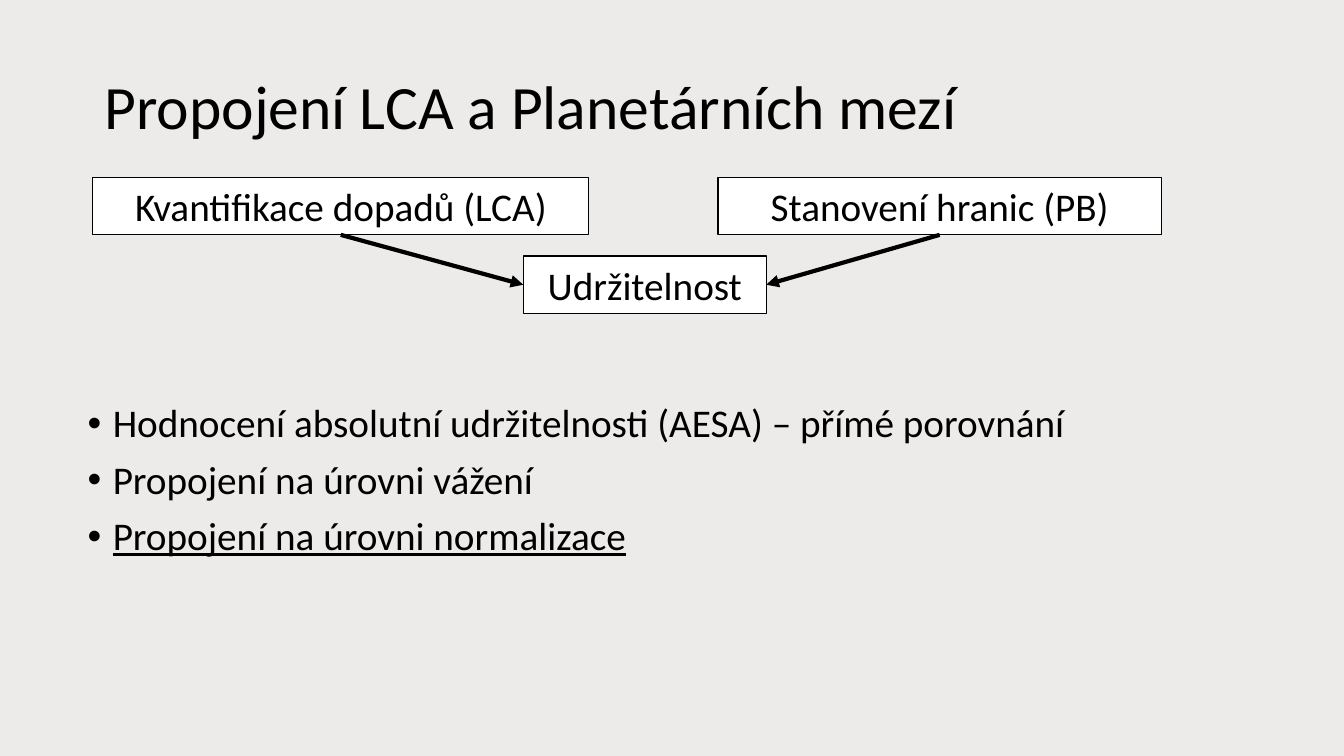
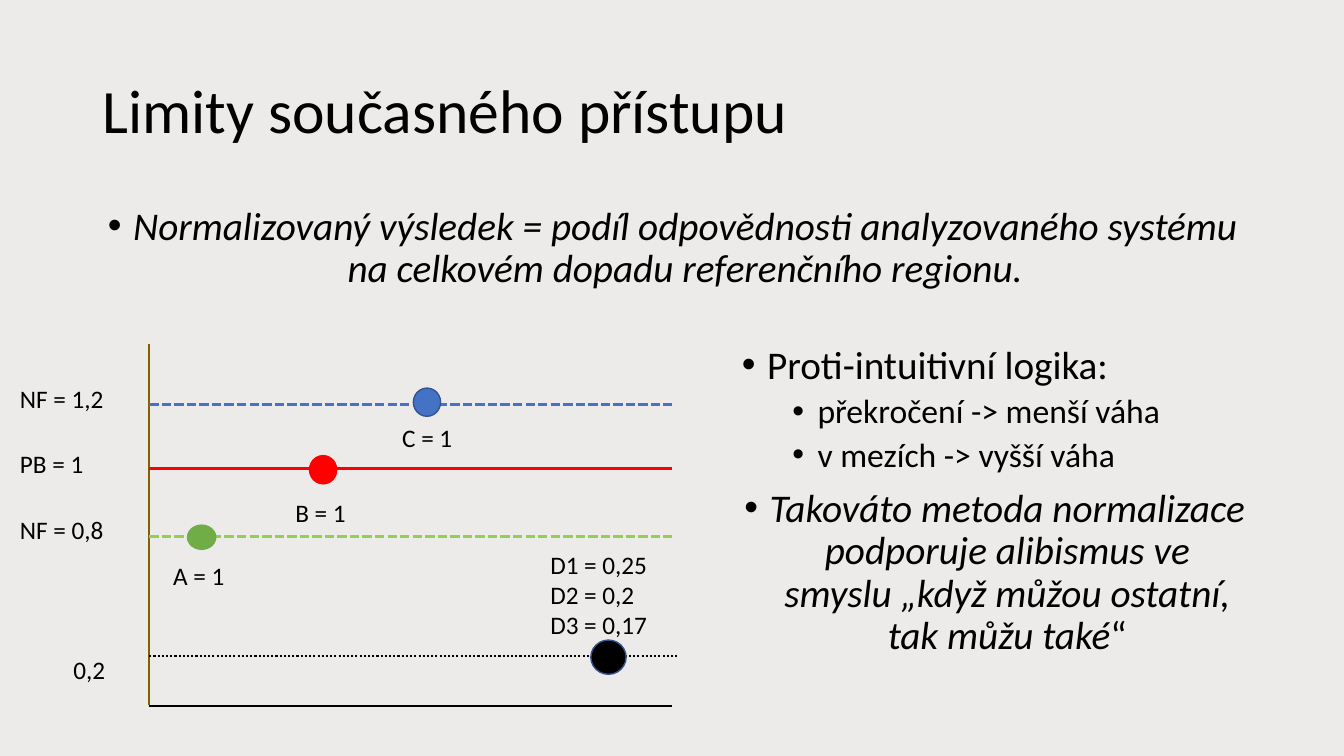
import dataclasses
import typing

import lxml.etree
import pptx
import pptx.dml.color
import pptx.enum.dml
import pptx.enum.shapes
import pptx.enum.text
import pptx.oxml.ns
import pptx.shapes.autoshape
import pptx.shapes.connector
import pptx.slide
import pptx.util

PX = 9144
SLIDE_WIDTH, SLIDE_HEIGHT = 1333, 750
AXIS_LEFT, AXIS_RIGHT, AXIS_TOP, AXIS_BOTTOM = 148, 667, 341, 700
LABEL_HEIGHT = 40
BULLET_INDENT = 25

Align = pptx.enum.text.PP_ALIGN
Dash = pptx.enum.dml.MSO_LINE
Preset = pptx.enum.shapes.MSO_SHAPE


@dataclasses.dataclass(frozen=True)
class Theme:
    font: str = "Calibri"
    bullet_font: str = "Arial"
    background: str = "ECEBE9"
    ink: str = "000000"
    paper: str = "FFFFFF"
    red: str = "FF0000"
    blue: str = "4472C4"
    dark_blue: str = "325491"
    green: str = "70AD47"
    lime: str = "92D050"
    olive: str = "806000"
    title_size: int = 44
    body_size: int = 28
    detail_size: int = 24
    label_size: int = 18


THEME = Theme()


class Box(typing.NamedTuple):
    left: int
    top: int
    width: int
    height: int


@dataclasses.dataclass(frozen=True)
class Line:
    text: str
    size: int = THEME.body_size
    align: typing.Optional[Align] = None
    italic: bool = False
    underline: bool = False
    level: typing.Optional[int] = None
    spacing: float = 1.0
    upright_ending: str = ""


@dataclasses.dataclass(frozen=True)
class Threshold:
    y: int
    color: str
    dash: typing.Optional[Dash]
    label: str
    label_box: Box
    right: int = AXIS_RIGHT
    weight: float = 2.25


@dataclasses.dataclass(frozen=True)
class Marker:
    box: Box
    fill: str
    outline: str
    labels: typing.Tuple[str, ...]
    label_box: Box


def level_label(row: int) -> Box:
    return Box(10, 375 + 65 * row, 123, LABEL_HEIGHT)


THRESHOLDS = (
    Threshold(401, THEME.blue, Dash.SQUARE_DOT, "NF = 1,2", level_label(0)),
    Threshold(465, THEME.red, None, "PB = 1", level_label(1)),
    Threshold(532, THEME.lime, Dash.SQUARE_DOT, "NF = 0,8", level_label(2)),
    Threshold(651, THEME.ink, Dash.ROUND_DOT, "0,2",
              Box(63, 644, 70, LABEL_HEIGHT), 673, 1.5),
)

MARKERS = (
    Marker(Box(186, 521, 28, 24), THEME.green, THEME.green,
           ("A = 1",), Box(162, 551, 104, LABEL_HEIGHT)),
    Marker(Box(307, 452, 27, 28), THEME.red, THEME.red,
           ("B = 1",), Box(283, 488, 82, LABEL_HEIGHT)),
    Marker(Box(410, 385, 27, 28), THEME.blue, THEME.dark_blue,
           ("C = 1",), Box(389, 414, 119, LABEL_HEIGHT)),
    Marker(Box(586, 635, 35, 34), THEME.ink, THEME.dark_blue,
           ("D1 = 0,25", "D2 = 0,2", "D3 = 0,17"), Box(536, 540, 130, 101)),
)


def rgb(color: str) -> pptx.dml.color.RGBColor:
    return pptx.dml.color.RGBColor.from_string(color)


def emu(*lengths: int) -> typing.List[pptx.util.Emu]:
    return [pptx.util.Emu(length * PX) for length in lengths]


def bullet(text: str, level: int = 0, **options: typing.Any) -> Line:
    size = THEME.detail_size if level else THEME.body_size
    return Line(text, size, level=level, spacing=0.9, **options)


def add_bullet(paragraph: typing.Any, level: int) -> None:
    paragraph.level = level
    paragraph.space_before = pptx.util.Pt(5 if level else 10)
    properties = paragraph._p.get_or_add_pPr()
    margin = BULLET_INDENT + 50 * level
    properties.set("marL", str(margin * PX))
    properties.set("indent", str(-BULLET_INDENT * PX))
    for tag, key, value in (("a:buFont", "typeface", THEME.bullet_font),
                            ("a:buChar", "char", "•")):
        mark = lxml.etree.SubElement(properties, pptx.oxml.ns.qn(tag))
        mark.set(key, value)


def write(frame: typing.Any, lines: typing.Sequence[Line]) -> None:
    frame.word_wrap = True
    frame.text = "\n".join(line.text for line in lines)
    for paragraph, line in zip(frame.paragraphs, lines):
        paragraph.alignment = line.align
        paragraph.line_spacing = line.spacing
        if line.level is not None:
            add_bullet(paragraph, line.level)
        if line.upright_ending:
            paragraph.add_run().text = line.upright_ending
        for index, run in enumerate(paragraph.runs):
            run.font.name = THEME.font
            run.font.size = pptx.util.Pt(line.size)
            run.font.color.rgb = rgb(THEME.ink)
            run.font.italic = line.italic and index == 0
            run.font.underline = line.underline


def add_text(slide: pptx.slide.Slide, box: Box, *lines: Line) -> typing.Any:
    frame = slide.shapes.add_textbox(*emu(*box)).text_frame
    write(frame, lines)
    return frame


def add_title(slide: pptx.slide.Slide, box: Box, text: str) -> None:
    frame = add_text(slide, box, Line(text, THEME.title_size, spacing=0.9))
    frame.vertical_anchor = pptx.enum.text.MSO_ANCHOR.MIDDLE


def add_figure(slide: pptx.slide.Slide, preset: Preset, box: Box, fill: str,
               outline: str) -> pptx.shapes.autoshape.Shape:
    shape = slide.shapes.add_shape(preset, *emu(*box))
    shape.shadow.inherit = False
    shape.fill.solid()
    shape.fill.fore_color.rgb = rgb(fill)
    shape.line.color.rgb = rgb(outline)
    shape.line.width = pptx.util.Pt(1)
    return shape


def add_box(slide: pptx.slide.Slide, box: Box,
            text: str) -> pptx.shapes.autoshape.Shape:
    shape = add_figure(slide, Preset.RECTANGLE, box, THEME.paper, THEME.ink)
    write(shape.text_frame, [Line(text, align=Align.CENTER)])
    return shape


def add_line(slide: pptx.slide.Slide, start: typing.Tuple[int, int],
             end: typing.Tuple[int, int], color: str, weight: float,
             dash: typing.Optional[Dash] = None
             ) -> pptx.shapes.connector.Connector:
    connector = slide.shapes.add_connector(
        pptx.enum.shapes.MSO_CONNECTOR.STRAIGHT, *emu(*start, *end))
    connector.line.color.rgb = rgb(color)
    connector.line.width = pptx.util.Pt(weight)
    connector.line.dash_style = dash
    lxml.etree.SubElement(connector._element.spPr,
                          pptx.oxml.ns.qn("a:effectLst"))
    return connector


def add_arrow(slide: pptx.slide.Slide, source: pptx.shapes.autoshape.Shape,
              target: pptx.shapes.autoshape.Shape, target_site: int) -> None:
    connector = add_line(slide, (0, 0), (0, 0), THEME.ink, 3)
    connector.begin_connect(source, 2)
    connector.end_connect(target, target_site)
    head = lxml.etree.SubElement(connector.line._get_or_add_ln(),
                                 pptx.oxml.ns.qn("a:tailEnd"))
    head.set("type", "triangle")


def build_linking_slide(slide: pptx.slide.Slide) -> None:
    add_title(slide, Box(94, 32, 1147, 153), "Propojení LCA a Planetárních mezí")
    add_text(slide, Box(77, 396, 1165, 287),
             bullet("Hodnocení absolutní udržitelnosti (AESA) – přímé porovnání"),
             bullet("Propojení na úrovni vážení"),
             bullet("Propojení na úrovni normalizace", underline=True))
    impacts = add_box(slide, Box(92, 176, 492, 57), "Kvantifikace dopadů (LCA)")
    limits = add_box(slide, Box(712, 176, 440, 57), "Stanovení hranic (PB)")
    sustainability = add_box(slide, Box(519, 254, 241, 57), "Udržitelnost")
    add_arrow(slide, impacts, sustainability, 1)
    add_arrow(slide, limits, sustainability, 3)


def add_threshold_diagram(slide: pptx.slide.Slide) -> None:
    add_line(slide, (AXIS_LEFT, AXIS_TOP), (AXIS_LEFT, AXIS_BOTTOM - 1),
             THEME.olive, 1.5)
    add_line(slide, (AXIS_LEFT, AXIS_BOTTOM), (AXIS_RIGHT, AXIS_BOTTOM),
             THEME.ink, 1.5)
    for threshold in THRESHOLDS:
        add_line(slide, (AXIS_LEFT, threshold.y), (threshold.right, threshold.y),
                 threshold.color, threshold.weight, threshold.dash)
        add_text(slide, threshold.label_box,
                 Line(threshold.label, THEME.label_size))
    for marker in MARKERS:
        add_figure(slide, Preset.FLOWCHART_CONNECTOR, marker.box, marker.fill,
                   marker.outline)
        add_text(slide, marker.label_box,
                 *(Line(label, THEME.label_size) for label in marker.labels))


def build_limits_slide(slide: pptx.slide.Slide) -> None:
    add_title(slide, Box(92, 40, 1150, 145), "Limity současného přístupu")
    add_text(slide, Box(92, 200, 1150, 127),
             bullet("Normalizovaný výsledek = podíl odpovědnosti analyzovaného "
                    "systému na celkovém dopadu referenčního regionu.",
                    align=Align.CENTER, italic=True))
    add_threshold_diagram(slide)
    add_text(slide, Box(726, 338, 521, 396),
             bullet("Proti-intuitivní logika:"),
             bullet("překročení -> menší váha", 1),
             bullet("v mezích -> vyšší váha", 1),
             bullet("Takováto metoda normalizace podporuje alibismus ve smyslu "
                    "„když můžou ostatní, tak můžu také",
                    align=Align.CENTER, italic=True, upright_ending="“"))


def main() -> None:
    presentation = pptx.Presentation()
    presentation.slide_width, presentation.slide_height = emu(SLIDE_WIDTH,
                                                              SLIDE_HEIGHT)
    background = presentation.slide_master.background.fill
    background.solid()
    background.fore_color.rgb = rgb(THEME.background)
    for build in (build_linking_slide, build_limits_slide):
        build(presentation.slides.add_slide(presentation.slide_layouts[6]))
    presentation.save("out.pptx")


if __name__ == "__main__":
    main()
